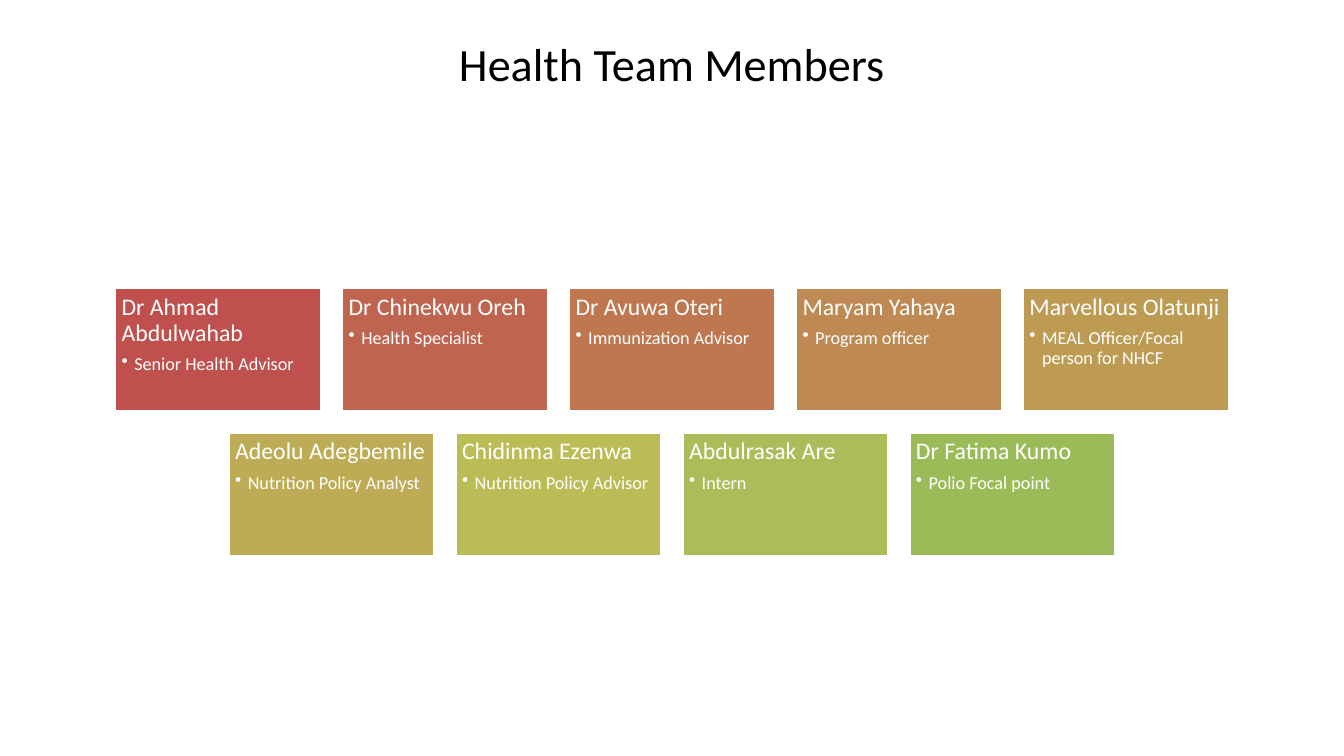
from lxml import etree
from pptx import Presentation
from pptx.dml.color import RGBColor
from pptx.enum.shapes import MSO_SHAPE
from pptx.enum.text import MSO_ANCHOR, MSO_AUTO_SIZE, PP_ALIGN
from pptx.oxml.ns import qn
from pptx.util import Cm, Pt

RECTANGLE = MSO_SHAPE.RECTANGLE
TOP = MSO_ANCHOR.TOP
NO_AUTOFIT = MSO_AUTO_SIZE.NONE
LEFT, CENTER = PP_ALIGN.LEFT, PP_ALIGN.CENTER

SLIDE_WIDTH, SLIDE_HEIGHT = 33.87, 19.05
CARD_WIDTH, CARD_HEIGHT, CARD_GAP = 5.2, 3.12, 0.52
FIRST_ROW_TOP = 7.26
BULLET_INDENT = 0.32

COLORS = {
    "title": "000000",
    "white": "FFFFFF",
    "red": "C0504D",
    "brick": "BF644F",
    "copper": "BF7750",
    "caramel": "BE8952",
    "ochre": "BD9B53",
    "sand": "BDAC55",
    "olive": "BCBC56",
    "lime": "ABBC58",
    "green": "9BBB59",
}

TEAM_ROWS = [
    [
        ("Dr Ahmad Abdulwahab", "Senior Health Advisor", "red"),
        ("Dr Chinekwu Oreh", "Health Specialist", "brick"),
        ("Dr Avuwa Oteri", "Immunization Advisor", "copper"),
        ("Maryam Yahaya", "Program officer", "caramel"),
        ("Marvellous Olatunji", "MEAL Officer/Focal person for NHCF", "ochre"),
    ],
    [
        ("Adeolu Adegbemile", "Nutrition Policy Analyst", "sand"),
        ("Chidinma Ezenwa", "Nutrition Policy Advisor", "olive"),
        ("Abdulrasak Are", "Intern", "lime"),
        ("Dr Fatima Kumo", "Polio Focal point", "green"),
    ],
]


class TeamSlide:
    font_name = "Calibri"
    name_size, role_size, title_size = 17, 13, 33

    def __init__(self, presentation):
        layout = presentation.slide_layouts.get_by_name("Title Only")
        self.slide = presentation.slides.add_slide(layout)

    def color(self, key):
        return RGBColor.from_string(COLORS[key])

    def style(self, paragraph, size, color, align):
        paragraph.alignment = align
        for run in paragraph.runs:
            run.font.name = self.font_name
            run.font.size = Pt(size)
            run.font.color.rgb = self.color(color)

    def add_title(self, text):
        title = self.slide.shapes.title
        title.left, title.top = Cm(1.69), Cm(0.76)
        title.width, title.height = Cm(30.48), Cm(3.18)
        frame = title.text_frame
        frame.text = text
        frame.auto_size = NO_AUTOFIT
        frame.vertical_anchor = TOP
        self.style(frame.paragraphs[0], self.title_size, "title", CENTER)

    def add_bullet(self, paragraph):
        properties = paragraph._p.get_or_add_pPr()
        properties.set("marL", str(Cm(BULLET_INDENT)))
        properties.set("indent", str(-Cm(BULLET_INDENT)))
        etree.SubElement(properties, qn("a:buChar")).set("char", "•")

    def add_card(self, left, top, name, role, fill):
        card = self.slide.shapes.add_shape(
            RECTANGLE, Cm(left), Cm(top), Cm(CARD_WIDTH), Cm(CARD_HEIGHT))
        card.shadow.inherit = False
        card.fill.solid()
        card.fill.fore_color.rgb = self.color(fill)
        card.line.color.rgb = self.color("white")
        card.line.width = Pt(2)

        frame = card.text_frame
        frame.word_wrap = True
        frame.vertical_anchor = TOP
        frame.margin_left = frame.margin_right = Cm(0.17)
        frame.margin_top = frame.margin_bottom = Cm(0.17)
        frame.text = f"{name}\n{role}"
        name_line, role_line = frame.paragraphs
        role_line.level = 1
        self.add_bullet(role_line)
        for line, size, space_after in (
                (name_line, self.name_size, 6), (role_line, self.role_size, 2)):
            line.line_spacing = 0.9
            line.space_after = Pt(space_after)
            self.style(line, size, "white", LEFT)

    def add_row(self, top, members):
        """Place one row of member cards, centred on the slide."""
        pitch = CARD_WIDTH + CARD_GAP
        first_left = (SLIDE_WIDTH - len(members) * pitch + CARD_GAP) / 2
        for column, member in enumerate(members):
            self.add_card(first_left + column * pitch, top, *member)


def main():
    presentation = Presentation()
    presentation.slide_width = Cm(SLIDE_WIDTH)
    presentation.slide_height = Cm(SLIDE_HEIGHT)

    team_slide = TeamSlide(presentation)
    team_slide.add_title("Health Team Members")
    for row, members in enumerate(TEAM_ROWS):
        team_slide.add_row(FIRST_ROW_TOP + row * (CARD_HEIGHT + CARD_GAP), members)

    presentation.save("out.pptx")


if __name__ == "__main__":
    main()
